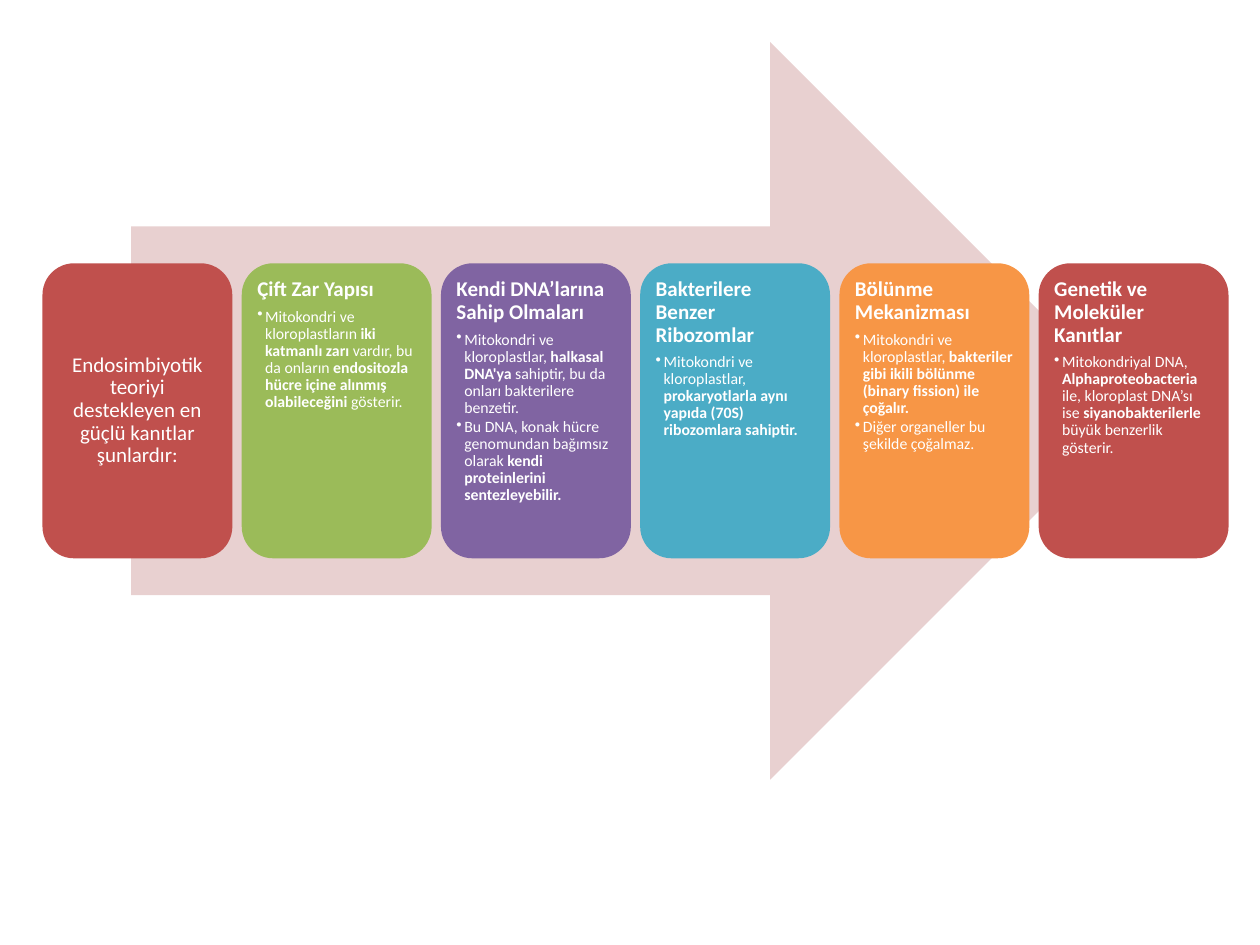
import dataclasses

import pptx
import pptx.dml.color
import pptx.enum.shapes
import pptx.enum.text
import pptx.oxml.ns
import pptx.util
from lxml import etree

Pt = pptx.util.Pt
SHAPE = pptx.enum.shapes.MSO_SHAPE
ALIGN = pptx.enum.text.PP_ALIGN
ANCHOR = pptx.enum.text.MSO_ANCHOR


@dataclasses.dataclass(frozen=True)
class Theme:
    font: str = "Calibri"
    title_size: float = 12
    body_size: float = 9
    text: str = "FFFFFF"
    arrow: str = "E8D0D0"
    red: str = "C0504D"
    green: str = "9BBB59"
    purple: str = "8064A2"
    teal: str = "4BACC6"
    orange: str = "F79646"


THEME = Theme()

# Arrow and card geometry, in points
ARROW_LEFT, ARROW_TOP, ARROW_WIDTH, ARROW_HEIGHT = 74.9, 24, 576, 421.5
CARD_LEFT, CARD_WIDTH, CARD_PITCH = 24.3, 108.5, 113.85
CARD_HEIGHT = 0.4 * ARROW_HEIGHT
CARD_TOP = ARROW_TOP + (ARROW_HEIGHT - CARD_HEIGHT) / 2
INSET = 3.6
BULLET_INDENT = 4.5

INTRO = "Endosimbiyotik teoriyi destekleyen en güçlü kanıtlar şunlardır:"

# Fill, title, bullets; ** encloses bold words
EVIDENCE = [
    (THEME.green, "Çift Zar Yapısı", [
        "Mitokondri ve kloroplastların **iki katmanlı zarı** vardır, bu da onların "
        "**endositozla hücre içine alınmış olabileceğini** gösterir."]),
    (THEME.purple, "Kendi DNA’larına Sahip Olmaları", [
        "Mitokondri ve kloroplastlar, **halkasal DNA'ya** sahiptir, bu da onları "
        "bakterilere benzetir.",
        "Bu DNA, konak hücre genomundan bağımsız olarak "
        "**kendi proteinlerini sentezleyebilir.**"]),
    (THEME.teal, "Bakterilere Benzer Ribozomlar", [
        "Mitokondri ve kloroplastlar, "
        "**prokaryotlarla aynı yapıda (70S) ribozomlara sahiptir.**"]),
    (THEME.orange, "Bölünme Mekanizması", [
        "Mitokondri ve kloroplastlar, "
        "**bakteriler gibi ikili bölünme (binary fission) ile çoğalır.**",
        "Diğer organeller bu şekilde çoğalmaz."]),
    (THEME.red, "Genetik ve Moleküler Kanıtlar", [
        "Mitokondriyal DNA, **Alphaproteobacteria** ile, kloroplast DNA’sı ise "
        "**siyanobakterilerle** büyük benzerlik gösterir."]),
]


def add_filled_shape(s, kind, left, top, width, height, fill):
    sp = s.shapes.add_shape(kind, Pt(left), Pt(top), Pt(width), Pt(height))
    sp.shadow.inherit = False
    sp.fill.solid()
    sp.fill.fore_color.rgb = pptx.dml.color.RGBColor.from_string(fill)
    sp.line.fill.background()
    return sp


def format_run(r, size, bold):
    r.font.name = THEME.font
    r.font.size = Pt(size)
    r.font.bold = bold
    r.font.color.rgb = pptx.dml.color.RGBColor.from_string(THEME.text)


def set_spacing(p, after):
    p.line_spacing = 0.9
    p.space_before = Pt(0)
    p.space_after = Pt(after)


def set_title(p, text, bold, align):
    p.text = text
    p.alignment = align
    set_spacing(p, 0.35 * THEME.title_size)
    format_run(p.runs[0], THEME.title_size, bold)


def add_bullet(tf, text):
    p = tf.add_paragraph()
    p.level = 1
    p.alignment = ALIGN.LEFT
    set_spacing(p, 0.15 * THEME.body_size)
    # Bullet mark and hanging indent
    pPr = p._p.get_or_add_pPr()
    pPr.set("marL", str(Pt(BULLET_INDENT)))
    pPr.set("indent", str(-Pt(BULLET_INDENT)))
    etree.SubElement(pPr, pptx.oxml.ns.qn("a:buChar")).set("char", "•")
    # Every second piece is bold
    for i, piece in enumerate(text.split("**")):
        if piece:
            r = p.add_run()
            r.text = piece
            format_run(r, THEME.body_size, i % 2 == 1)


def add_card(s, column, fill, anchor):
    sp = add_filled_shape(s, SHAPE.ROUNDED_RECTANGLE, CARD_LEFT + column * CARD_PITCH,
                          CARD_TOP, CARD_WIDTH, CARD_HEIGHT, fill)
    tf = sp.text_frame
    tf.word_wrap = True
    tf.vertical_anchor = anchor
    tf.margin_left = tf.margin_right = tf.margin_top = tf.margin_bottom = Pt(INSET)
    return tf


def main():
    prs = pptx.Presentation()
    prs.slide_width, prs.slide_height = Pt(720), Pt(540)
    s = prs.slides.add_slide(prs.slide_layouts[6])

    # Background arrow
    add_filled_shape(s, SHAPE.RIGHT_ARROW, ARROW_LEFT, ARROW_TOP,
                     ARROW_WIDTH, ARROW_HEIGHT, THEME.arrow)

    # Introduction card
    tf = add_card(s, 0, THEME.red, ANCHOR.MIDDLE)
    set_title(tf.paragraphs[0], INTRO, False, ALIGN.CENTER)

    # Evidence cards
    for column, (fill, title, bullets) in enumerate(EVIDENCE, start=1):
        tf = add_card(s, column, fill, ANCHOR.TOP)
        set_title(tf.paragraphs[0], title, True, ALIGN.LEFT)
        for bullet in bullets:
            add_bullet(tf, bullet)

    prs.save("out.pptx")


if __name__ == "__main__":
    main()
